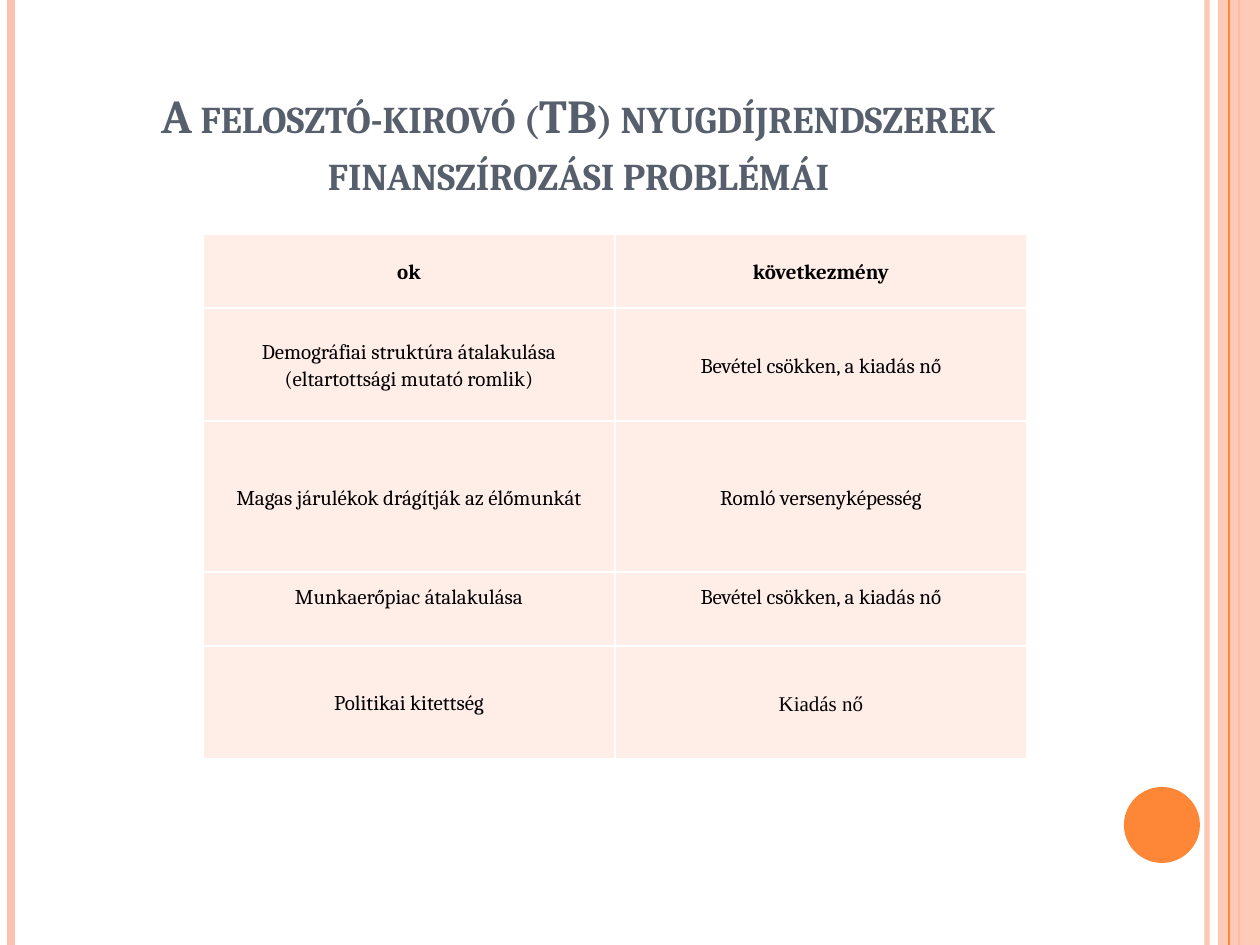
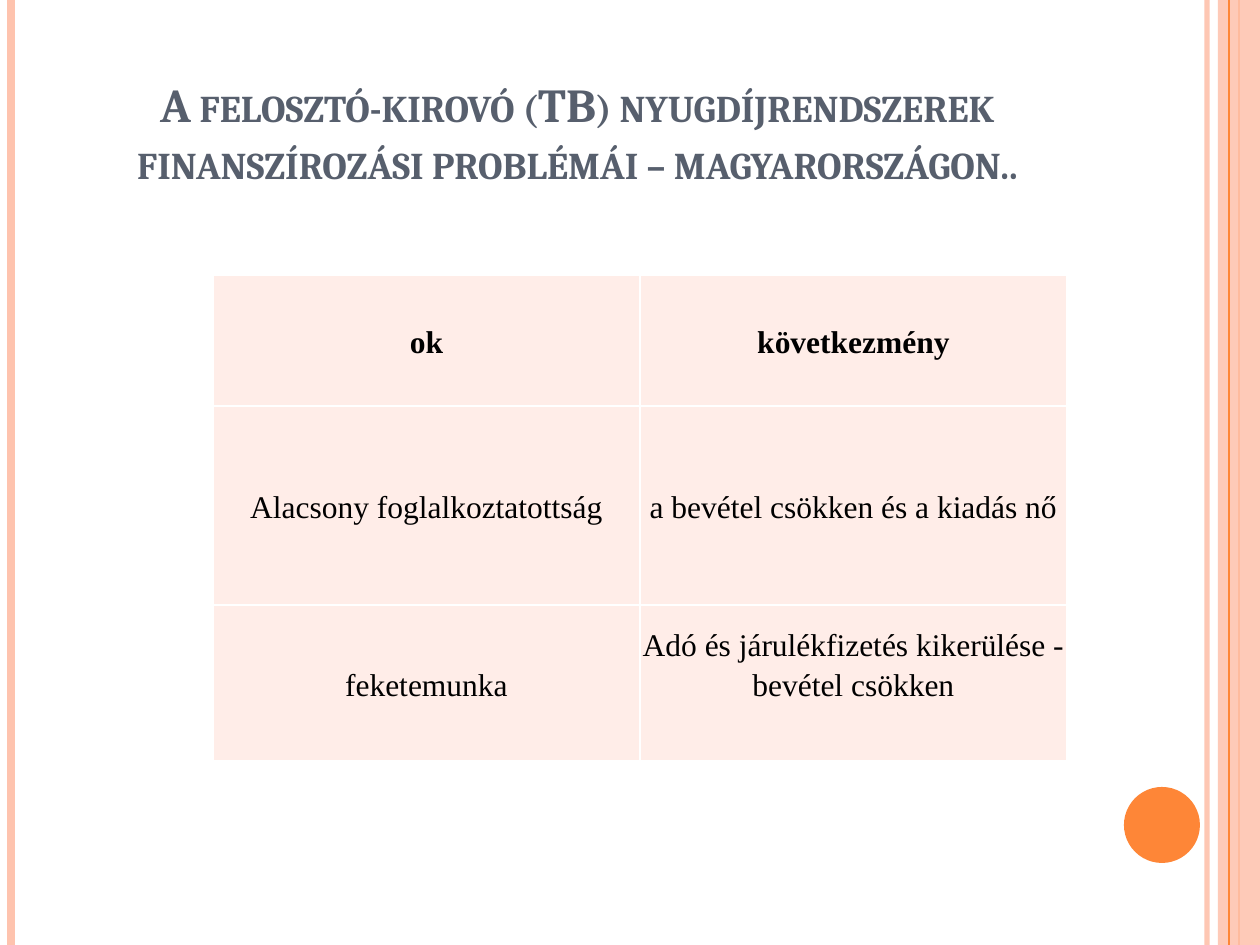
from dataclasses import dataclass

from lxml import etree
from pptx import Presentation
from pptx.dml.color import RGBColor
from pptx.enum.shapes import MSO_CONNECTOR, MSO_SHAPE
from pptx.enum.text import MSO_ANCHOR, PP_ALIGN
from pptx.oxml.ns import qn
from pptx.util import Emu, Pt

EMU_PER_INCH = 914400
PX_PER_INCH = 126
SLIDE_WIDTH, SLIDE_HEIGHT = 1260, 945
BLANK_LAYOUT = 6

CENTER = PP_ALIGN.CENTER
MIDDLE, BOTTOM = MSO_ANCHOR.MIDDLE, MSO_ANCHOR.BOTTOM
STRAIGHT = MSO_CONNECTOR.STRAIGHT
RECTANGLE, OVAL = MSO_SHAPE.RECTANGLE, MSO_SHAPE.OVAL


@dataclass(frozen=True)
class Theme:
    orange: str = "FE8637"
    peach: str = "FEC3AE"
    cell: str = "FFEDE8"
    border: str = "FFFFFF"
    title: str = "575F6D"
    text: str = "000000"
    title_font: str = "Cambria"
    serif_font: str = "Times New Roman"
    title_size: int = 27
    small_size: int = 12
    large_size: int = 18
    border_width: int = 1
    line_spacing: float = 1.15


def px(length):
    return Emu(round(length * EMU_PER_INCH / PX_PER_INCH))


def set_opacity(shape, percent):
    for color in shape._element.spPr.iter(qn("a:srgbClr")):
        etree.SubElement(color, qn("a:alpha"), val=str(percent * 1000))


class Deck:
    """Holds the presentation, its theme and the slide being built."""

    def __init__(self, theme):
        self.theme = theme
        self.presentation = Presentation()
        self.presentation.slide_width = px(SLIDE_WIDTH)
        self.presentation.slide_height = px(SLIDE_HEIGHT)
        self.slide = None

    def new_slide(self):
        layout = self.presentation.slide_layouts[BLANK_LAYOUT]
        self.slide = self.presentation.slides.add_slide(layout)
        self.frame()

    def frame(self):
        """Draw the side bands and the circle shared by all slides."""
        theme = self.theme
        self.vertical_line(1207, theme.peach, 3, opacity=93)
        self.vertical_line(11, theme.peach, 4.5)
        self.vertical_line(1239, theme.orange, 1.5)
        self.shape(RECTANGLE, 1218, 0, 42, SLIDE_HEIGHT, theme.peach, opacity=87)
        self.vertical_line(1229, theme.orange, 0.75)
        self.shape(OVAL, 1124, 787, 76, 76, theme.orange)

    def vertical_line(self, x, color, width, opacity=100):
        line = self.slide.shapes.add_connector(
            STRAIGHT, px(x), 0, px(x), px(SLIDE_HEIGHT))
        line.line.color.rgb = RGBColor.from_string(color)
        line.line.width = Pt(width)
        if opacity < 100:
            set_opacity(line, opacity)
        etree.SubElement(line._element.spPr, qn("a:effectLst"))

    def shape(self, kind, left, top, width, height, color, opacity=100):
        shape = self.slide.shapes.add_shape(
            kind, px(left), px(top), px(width), px(height))
        shape.shadow.inherit = False
        shape.fill.solid()
        shape.fill.fore_color.rgb = RGBColor.from_string(color)
        shape.line.fill.background()
        if opacity < 100:
            set_opacity(shape, opacity)

    def format_text(self, paragraph, font_name, size, color, bold):
        paragraph.alignment = CENTER
        for run in paragraph.runs:
            run.font.name = font_name
            run.font.size = Pt(size)
            run.font.bold = bold
            run.font.color.rgb = RGBColor.from_string(color)

    def title(self, text, left, top, width, height):
        theme = self.theme
        box = self.slide.shapes.add_textbox(
            px(left), px(top), px(width), px(height))
        frame = box.text_frame
        frame.word_wrap = True
        frame.vertical_anchor = BOTTOM
        frame.text = text
        paragraph = frame.paragraphs[0]
        self.format_text(
            paragraph, theme.title_font, theme.title_size, theme.title, True)
        paragraph.runs[0]._r.get_or_add_rPr().set("cap", "small")

    def table(self, rows, left, top, column_width, row_heights, font_name, size):
        """Draw a table whose first row is bold, and return it."""
        column_count = len(rows[0])
        table = self.slide.shapes.add_table(
            len(rows), column_count, px(left), px(top),
            px(column_width * column_count), px(sum(row_heights))).table
        for column in table.columns:
            column.width = px(column_width)
        for row_index, (texts, height) in enumerate(zip(rows, row_heights)):
            table.rows[row_index].height = px(height)
            for column_index, text in enumerate(texts):
                cell = table.cell(row_index, column_index)
                self.cell(cell, text, font_name, size, bold=row_index == 0)
        return table

    def cell(self, cell, text, font_name, size, bold):
        theme = self.theme
        cell.margin_left = cell.margin_right = px(1)
        cell.margin_top = cell.margin_bottom = 0
        cell.vertical_anchor = MIDDLE
        self.cell_borders(cell)
        cell.fill.solid()
        cell.fill.fore_color.rgb = RGBColor.from_string(theme.cell)
        cell.text_frame.text = text
        paragraph = cell.text_frame.paragraphs[0]
        paragraph.line_spacing = theme.line_spacing
        self.format_text(paragraph, font_name, size, theme.text, bold)

    def cell_borders(self, cell):
        properties = cell._tc.get_or_add_tcPr()
        width = str(Pt(self.theme.border_width))
        for side in ("a:lnL", "a:lnR", "a:lnT", "a:lnB"):
            border = etree.SubElement(properties, qn(side), w=width)
            fill = etree.SubElement(border, qn("a:solidFill"))
            etree.SubElement(fill, qn("a:srgbClr"), val=self.theme.border)


HEADER = ("ok", "következmény")
TITLE = "A felosztó-kirovó (TB) nyugdíjrendszerek finanszírozási problémái"

GENERAL_PROBLEMS = [
    HEADER,
    ("Demográfiai struktúra átalakulása (eltartottsági mutató romlik)",
     "Bevétel csökken, a kiadás nő"),
    ("Magas járulékok drágítják az élőmunkát", "Romló versenyképesség"),
    ("Munkaerőpiac átalakulása", "Bevétel csökken, a kiadás nő"),
    ("Politikai kitettség", "Kiadás nő"),
]

HUNGARIAN_PROBLEMS = [
    HEADER,
    ("Alacsony foglalkoztatottság", "a bevétel csökken és a kiadás nő"),
    ("feketemunka", "Adó és járulékfizetés kikerülése - bevétel csökken"),
]


def general_slide(deck):
    theme = deck.theme
    deck.new_slide()
    deck.title(TITLE, 64, 37, 1029, 169)
    table = deck.table(GENERAL_PROBLEMS, 203, 234, 412, (74, 113, 151, 74, 113),
                       theme.title_font, theme.small_size)
    for labour_market_cell in table.rows[3].cells:
        labour_market_cell.margin_bottom = px(27)
    political_result = table.cell(4, 1).text_frame.paragraphs[0]
    political_result.runs[0].font.name = theme.serif_font


def hungarian_slide(deck):
    theme = deck.theme
    deck.new_slide()
    deck.title(f"{TITLE} – magyarországon..", 63, 38, 1029, 157)
    table = deck.table(HUNGARIAN_PROBLEMS, 213, 275, 427, (131, 199, 156),
                       theme.serif_font, theme.large_size)
    table.cell(2, 1).margin_bottom = px(40)


def main():
    deck = Deck(Theme())
    general_slide(deck)
    hungarian_slide(deck)
    deck.presentation.save("out.pptx")


if __name__ == "__main__":
    main()
